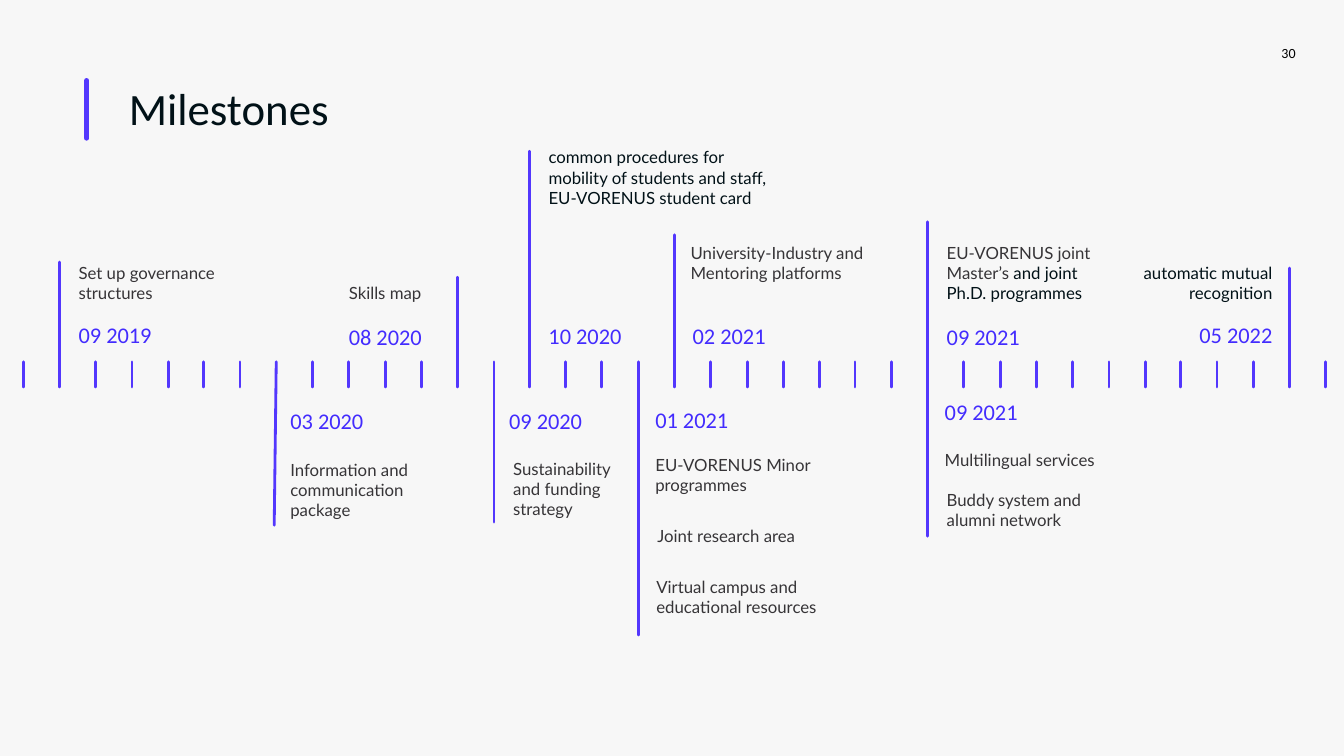
from dataclasses import dataclass

from lxml.etree import SubElement as Sub
from pptx import Presentation
from pptx.dml.color import RGBColor as Rgb
from pptx.enum.shapes import MSO_CONNECTOR as Conn
from pptx.enum.text import MSO_ANCHOR as Anchor
from pptx.enum.text import MSO_AUTO_SIZE as Fit
from pptx.enum.text import PP_ALIGN as Align
from pptx.oxml.ns import qn
from pptx.slide import Slide
from pptx.util import Emu, Pt


@dataclass(frozen=True)
class Theme:
    back: str = "F7F7F7"
    line: str = "5337FD"
    date: str = "432CFE"
    grey: str = "363437"
    dark: str = "011117"
    black: str = "000000"
    head: str = "Calibri"
    body: str = "Lato"
    title: int = 32
    month: int = 16
    note: int = 12
    page: int = 10
    thin: float = 2
    thick: float = 3.75


@dataclass(frozen=True)
class Style:
    font: str
    size: int
    color: str


@dataclass(frozen=True)
class Label:
    text: str
    left: int
    top: int
    width: int
    height: int
    style: Style
    right: bool = False
    tail: str = ""
    pads: tuple[int, int, int, int] = (0, 5, 10, 5)
    anchor: Anchor = Anchor.TOP
    fit: Fit = Fit.SHAPE_TO_FIT_TEXT


@dataclass(frozen=True)
class Stem:
    top: int
    base: int
    lean: int = 0


THEME = Theme()
DATE = Style(THEME.head, THEME.month, THEME.date)
GREY = Style(THEME.body, THEME.note, THEME.grey)
DARK = Style(THEME.body, THEME.note, THEME.dark)
TITLE = Style(THEME.head, THEME.title, THEME.dark)
PAGE = Style(THEME.head, THEME.page, THEME.black)

WIDE, HIGH = 1333, 750
FIRST, LAST, COUNT = 23, 1315, 37
TICK = Stem(359, 384)
STEMS = {
    1: Stem(260, 384),
    7: Stem(359, 521, -2),
    12: Stem(275, 384),
    13: Stem(359, 518),
    14: Stem(150, 384),
    17: Stem(359, 630),
    18: Stem(233, 384),
    25: Stem(220, 532),
    35: Stem(266, 384),
}
FLUSH = (0, 5, 0, 5)

LABELS = [
    Label("Milestones", 118, 78, 1110, 57, TITLE, pads=(10, 5, 10, 5),
          anchor=Anchor.MIDDLE, fit=Fit.NONE),
    Label("30", 1228, 44, 61, 27, PAGE, True, pads=(10, 0, 4, 5), fit=Fit.NONE),
    Label("09 2019", 78, 314, 187, 37, DATE),
    Label("Set up governance structures", 78, 256, 154, 50, GREY),
    Label("03 2020", 288, 399, 187, 37, DATE),
    Label("Information and communication package", 288, 451, 154, 71, GREY),
    Label("08 2020", 346, 316, 187, 37, DATE),
    Label("Skills map", 346, 276, 154, 30, GREY),
    Label("09 2020", 505, 399, 187, 37, DATE),
    Label("Sustainability\vand funding strategy", 509, 450, 154, 71, GREY),
    Label("10 2020", 544, 315, 187, 37, DATE),
    Label("common procedures for mobility of students and staff, "
          "EU-VORENUS student card", 544, 141, 232, 71, DARK),
    Label("01 2021", 650, 398, 187, 37, DATE),
    Label("EU-VORENUS Minor programmes", 650, 446, 177, 50, GREY),
    Label("Joint research area", 652, 517, 177, 30, GREY),
    Label("Virtual campus and educational resources", 651, 567, 207, 50, GREY),
    Label("02 2021", 687, 315, 187, 37, DATE),
    Label("University-Industry and Mentoring platforms", 685, 236, 187, 50, GREY),
    Label("09 2021", 939, 316, 187, 37, DATE),
    Label("EU-VORENUS joint Master’s ", 939, 236, 170, 71, GREY,
          tail="and joint Ph.D. programmes"),
    Label("09 2021", 937, 390, 187, 37, DATE),
    Label("Multilingual services", 937, 441, 177, 30, GREY),
    Label("Buddy system and alumni network", 939, 481, 177, 50, GREY),
    Label("05 2022", 1108, 314, 154, 37, DATE, True, pads=FLUSH),
    Label("automatic mutual recognition", 1123, 256, 139, 50, DARK, True, pads=FLUSH),
]


def px(n: int) -> Emu:
    return Emu(n * 9144)


def rule(slide: Slide, x: int, stem: Stem, width: float) -> None:
    line = slide.shapes.add_connector(
        Conn.STRAIGHT, px(x), px(stem.top), px(x + stem.lean), px(stem.base))
    line.line.color.rgb = Rgb.from_string(THEME.line)
    line.line.width = Pt(width)
    props = line.element.spPr
    props.find(qn("a:ln")).set("cap", "rnd")
    Sub(props, qn("a:effectLst"))


def write(slide: Slide, label: Label) -> None:
    box = slide.shapes.add_textbox(
        px(label.left), px(label.top), px(label.width), px(label.height))
    frame = box.text_frame
    frame.text = label.text
    frame.word_wrap = True
    frame.auto_size = label.fit
    frame.vertical_anchor = label.anchor
    (frame.margin_left, frame.margin_top,
     frame.margin_right, frame.margin_bottom) = map(px, label.pads)
    para = frame.paragraphs[0]
    para.alignment = Align.RIGHT if label.right else Align.LEFT
    if label.tail:
        para.add_run().text = label.tail
    for run in para.runs:
        font = run.font
        font.name = label.style.font
        font.size = Pt(label.style.size)
        tint = THEME.dark if run.text == label.tail else label.style.color
        font.color.rgb = Rgb.from_string(tint)


def main() -> None:
    deck = Presentation()
    deck.slide_width, deck.slide_height = px(WIDE), px(HIGH)
    slide = deck.slides.add_slide(deck.slide_layouts[6])
    fill = slide.background.fill
    fill.solid()
    fill.fore_color.rgb = Rgb.from_string(THEME.back)

    rule(slide, 86, Stem(80, 137), THEME.thick)
    for i in range(COUNT):
        x = round(FIRST + i * (LAST - FIRST) / (COUNT - 1))
        rule(slide, x, STEMS.get(i, TICK), THEME.thin)
    for label in LABELS:
        write(slide, label)
    deck.save("out.pptx")


if __name__ == "__main__":
    main()
